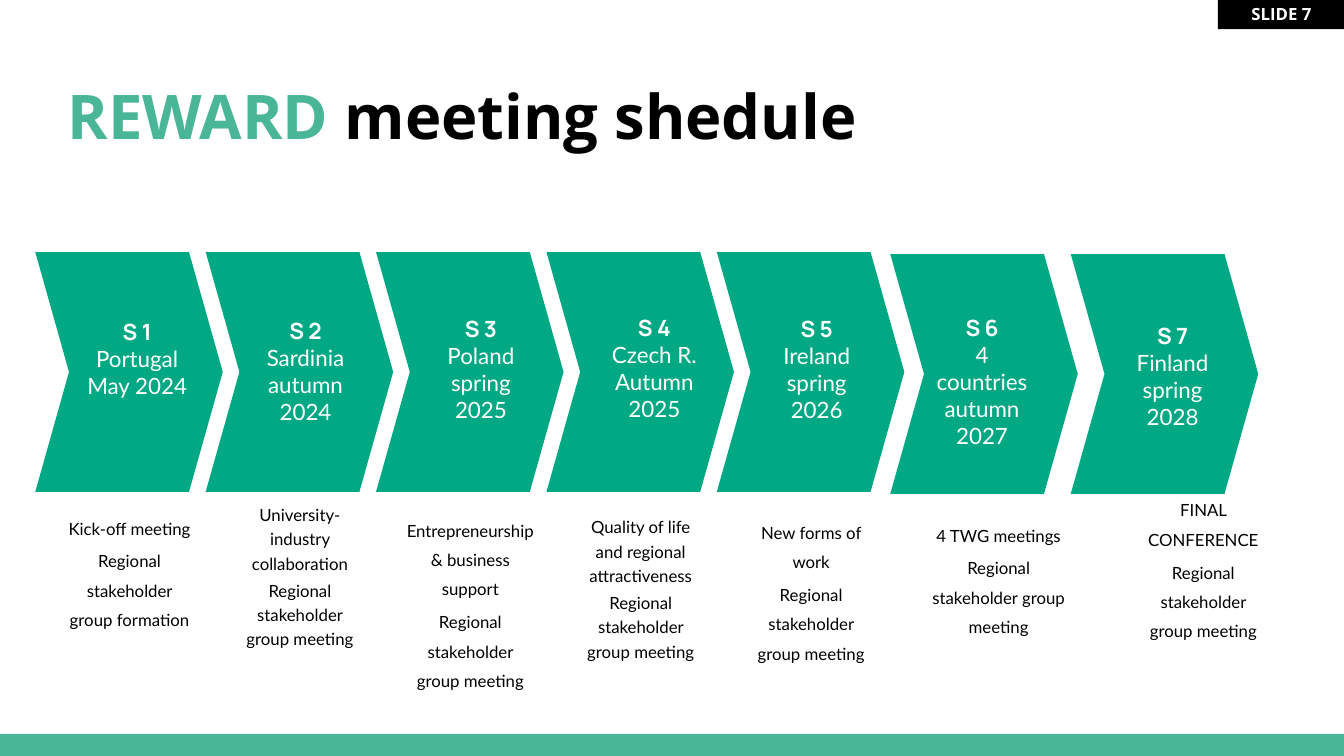
from dataclasses import dataclass

from pptx import Presentation
from pptx import util as u
from pptx.dml.color import RGBColor
from pptx.enum import shapes, text


@dataclass(frozen=True)
class Theme:
    mint: str = "4AB698"
    green: str = "01A884"
    black: str = "000000"
    white: str = "FFFFFF"
    heading: str = "Open Sans"
    code: str = "Manrope"
    body: str = "Lato"
    title_size: int = 44
    label_size: int = 16
    note_size: int = 12


@dataclass(frozen=True)
class Step:
    """One meeting; label and note are (offset from chevron, top, width)."""
    left: float
    top: float
    label: tuple
    note: tuple
    spacing: float
    lines: tuple
    topics: tuple


THEME = Theme()
CHEVRON_W, CHEVRON_H = 1.86, 2.38
PITCH = 1.69
LABEL_W, NOTE_W = 1.22, 1.39
REGIONAL = "Regional stakeholder group meeting"


def first_row(i):
    return 0.35 + PITCH * i


STEPS = [
    Step(first_row(0), 2.5, (0.4, 3.11, LABEL_W), (0.24, 5.03, NOTE_W), 1.46,
         ("S 1", "Portugal", "May 2024"),
         ("Kick-off meeting", "Regional stakeholder group formation")),
    Step(first_row(1), 2.5, (0.38, 3.1, LABEL_W), (0.24, 4.95, NOTE_W), 1.2,
         ("S 2", "Sardinia autumn 2024"),
         ("University-industry collaboration", REGIONAL)),
    Step(first_row(2), 2.5, (0.43, 3.08, LABEL_W), (0.24, 5.05, NOTE_W), 1.46,
         ("S 3", "Poland", "spring 2025"),
         ("Entrepreneurship & business support", REGIONAL)),
    Step(first_row(3), 2.5, (0.46, 3.07, LABEL_W), (0.24, 5.07, NOTE_W), 1.2,
         ("S 4", "Czech R.", "Autumn 2025"),
         ("Quality of life and regional attractiveness", REGIONAL)),
    Step(first_row(4), 2.5, (0.38, 3.08, LABEL_W), (0.24, 5.07, NOTE_W), 1.46,
         ("S 5", "Ireland", "spring 2026"),
         ("New forms of work", REGIONAL)),
    Step(8.83, 2.52, (0.3, 3.07, LABEL_W), (0.29, 5.1, 1.57), 1.46,
         ("S 6", "4 countries", "autumn 2027"),
         ("4 TWG meetings", REGIONAL)),
    Step(10.62, 2.52, (0.4, 3.15, LABEL_W), (0.62, 4.85, NOTE_W), 1.46,
         ("S 7", "Finland", "spring 2028"),
         ("FINAL CONFERENCE", REGIONAL)),
]


def add_run(p, words, font, size, color, bold=False):
    r = p.add_run()
    r.text = words
    r.font.name = font
    r.font.size = u.Pt(size)
    r.font.bold = bold
    r.font.color.rgb = RGBColor.from_string(color)


def set_frame(tf, inset_x, inset_y, anchor=text.MSO_ANCHOR.TOP):
    tf.word_wrap = True
    tf.vertical_anchor = anchor
    tf.margin_left = tf.margin_right = u.Inches(inset_x)
    tf.margin_top = tf.margin_bottom = u.Inches(inset_y)


def add_text_box(s, box, inset_x, inset_y):
    tf = s.shapes.add_textbox(*map(u.Inches, box)).text_frame
    set_frame(tf, inset_x, inset_y)
    return tf


def centred_paragraphs(tf, items):
    """Yield a centred paragraph with each item, reusing the first one."""
    for i, item in enumerate(items):
        p = tf.add_paragraph() if i else tf.paragraphs[0]
        p.alignment = text.PP_ALIGN.CENTER
        yield i, p, item


def add_filled(s, kind, box, color):
    sp = s.shapes.add_shape(kind, *map(u.Inches, box))
    sp.shadow.inherit = False
    sp.fill.solid()
    sp.fill.fore_color.rgb = RGBColor.from_string(color)
    sp.line.fill.background()
    return sp


def add_page_frame(s):
    """Bottom band and the slide number tab."""
    rect = shapes.MSO_SHAPE.RECTANGLE
    add_filled(s, rect, (0, 7.28, 13.33, 0.24), THEME.mint)
    tab = add_filled(s, rect, (12.08, -0.01, 1.26, 0.3), THEME.black)
    tf = tab.text_frame
    set_frame(tf, 0.1, 0, text.MSO_ANCHOR.MIDDLE)
    p = tf.paragraphs[0]
    p.alignment = text.PP_ALIGN.CENTER
    add_run(p, "SLIDE 7", THEME.heading, THEME.note_size, THEME.white, True)


def add_title(s, box):
    p = add_text_box(s, box, 0.1, 0.05).paragraphs[0]
    p.line_spacing = 0.9
    for words, color in (("REWARD ", THEME.mint), ("meeting shedule", THEME.black)):
        add_run(p, words, THEME.heading, THEME.title_size, color, True)


def add_label(s, box, lines):
    tf = add_text_box(s, box, 0.1, 0.05)
    for i, p, line in centred_paragraphs(tf, lines):
        font = THEME.body if i else THEME.code
        add_run(p, line, font, THEME.label_size, THEME.white, bold=i == 0)


def add_note(s, box, topics, spacing):
    tf = add_text_box(s, box, 0.05, 0.02)
    for i, p, topic in centred_paragraphs(tf, topics):
        p.line_spacing = spacing
        if i:
            p.space_before = u.Pt(2.4)
        add_run(p, topic, THEME.body, THEME.note_size, THEME.black)


def add_step(s, step):
    chevron = add_filled(s, shapes.MSO_SHAPE.CHEVRON,
                         (step.left, step.top, CHEVRON_W, CHEVRON_H), THEME.green)
    chevron.adjustments[0] = 0.18
    dx, top, width = step.label
    add_label(s, (step.left + dx, top, width, 1.2), step.lines)
    dx, top, width = step.note
    add_note(s, (step.left + dx, top, width, 1.5), step.topics, step.spacing)


def main():
    prs = Presentation()
    prs.slide_width, prs.slide_height = u.Inches(13.33), u.Inches(7.5)
    s = prs.slides.add_slide(prs.slide_layouts[6])
    add_page_frame(s)
    for step in STEPS:
        add_step(s, step)
    add_title(s, (0.57, 0.81, 11.5, 1.45))
    prs.save("out.pptx")


if __name__ == "__main__":
    main()
